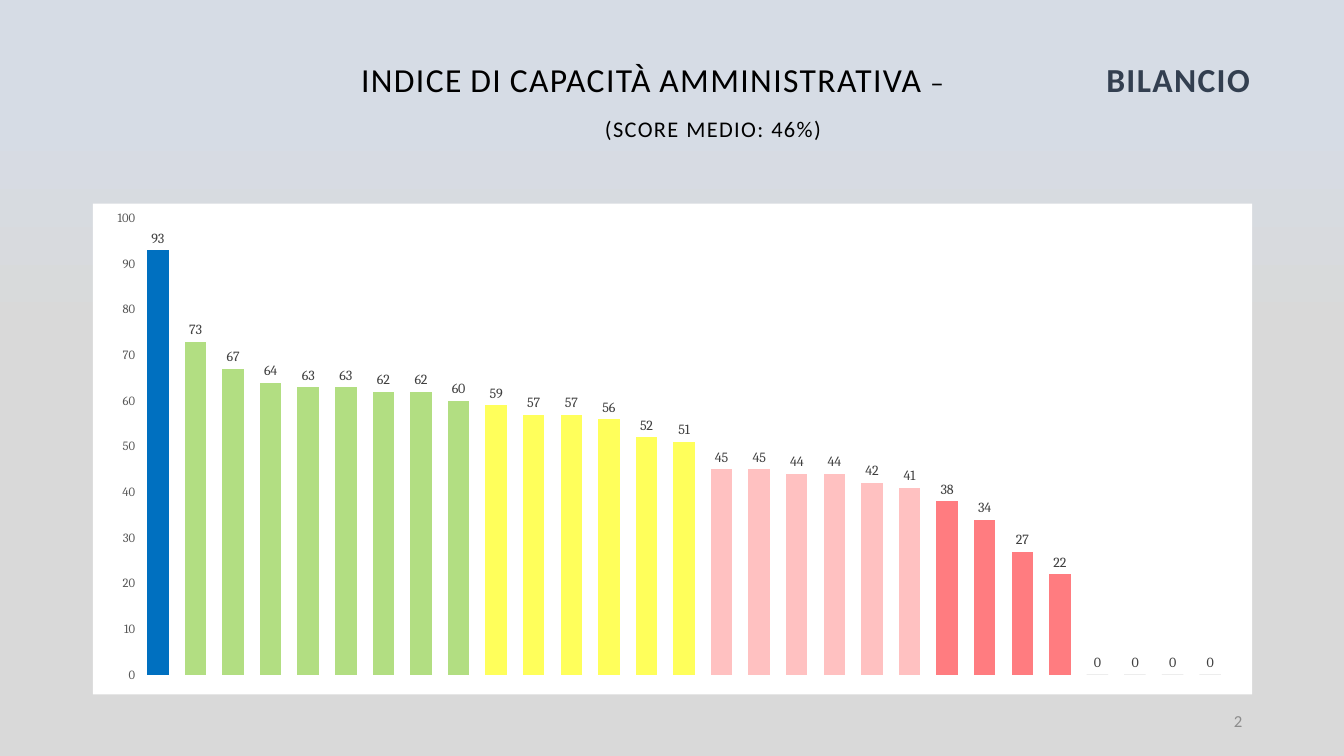
from lxml import etree
from pptx import Presentation
from pptx.chart.data import CategoryChartData
from pptx.dml.color import RGBColor
from pptx.enum.chart import XL_CHART_TYPE, XL_LABEL_POSITION, XL_TICK_MARK
from pptx.enum.text import MSO_ANCHOR, MSO_AUTO_SIZE, PP_ALIGN
from pptx.oxml import parse_xml
from pptx.oxml.ns import nsdecls, qn
from pptx.util import Inches, Pt

BLACK = RGBColor(0x00, 0x00, 0x00)
NAVY = RGBColor(0x33, 0x3F, 0x50)
NUMBER_GRAY = RGBColor(0x8C, 0x8C, 0x8C)
AXIS_GRAY = RGBColor(0x59, 0x59, 0x59)
LABEL_GRAY = RGBColor(0x40, 0x40, 0x40)
BLUE = RGBColor(0x00, 0x70, 0xC0)
GREEN = RGBColor(0xB2, 0xDE, 0x82)
YELLOW = RGBColor(0xFF, 0xFF, 0x5B)
PINK = RGBColor(0xFF, 0xC1, 0xC1)
RED = RGBColor(0xFF, 0x7C, 0x80)
ZERO_GRAY = RGBColor(0x76, 0x71, 0x71)

MARGIN, CONTENT_WIDTH = Inches(0.92), Inches(11.5)

# Scores by colour band, from best to worst
BANDS = [
    (BLUE, [93]),
    (GREEN, [73, 67, 64, 63, 63, 62, 62, 60]),
    (YELLOW, [59, 57, 57, 56, 52, 51]),
    (PINK, [45, 45, 44, 44, 42, 41]),
    (RED, [38, 34, 27, 22]),
    (ZERO_GRAY, [0, 0, 0, 0]),
]


def add_run(para, text, size, color, bold=False, spacing=None):
    run = para.add_run()
    run.text = text
    font = run.font
    font.name, font.size, font.bold = "Calibri", Pt(size), bold
    font.color.rgb = color
    if spacing is not None:
        properties = run._r.get_or_add_rPr()
        properties.set("cap", "small")
        properties.set("spc", str(spacing * 100))


def set_font(font, size, color):
    font.name, font.size = "Cambria", Pt(size)
    font.color.rgb = color


deck = Presentation()
deck.slide_width, deck.slide_height = Inches(13.33), Inches(7.5)
page = deck.slides.add_slide(deck.slide_layouts[5])

# Background gradient, top to bottom
backdrop = page.background.fill
backdrop.gradient()
backdrop.gradient_angle = 270
stops = page.background._cSld.find(".//" + qn("a:gsLst"))
for stop in list(stops):
    stops.remove(stop)
for share, color in [(0, "D6DCE5"), (15, "D6DCE5"), (45, "D9D9D9"), (100, "D9D9D9")]:
    stop = etree.SubElement(stops, qn("a:gs"), pos=str(share * 1000))
    etree.SubElement(stop, qn("a:srgbClr"), val=color)

# Title
title = page.shapes.title
title.left, title.top = MARGIN, Inches(0.2)
title.width, title.height = CONTENT_WIDTH, Inches(1.65)
frame = title.text_frame
frame.word_wrap = True
frame.auto_size = MSO_AUTO_SIZE.NONE
frame.vertical_anchor = MSO_ANCHOR.MIDDLE
heading, subtitle = frame.paragraphs[0], frame.add_paragraph()
for para, side, inset in [(heading, "marL", 1.31), (subtitle, "marR", 0.26)]:
    para.alignment = PP_ALIGN.CENTER
    para.line_spacing = 0.9
    para.space_before, para.space_after = Pt(0), Pt(10)
    para._p.get_or_add_pPr().set(side, str(Inches(inset)))
add_run(heading, "INDICE DI CAPACITÀ AMMINISTRATIVA –", 24, BLACK, spacing=1)
add_run(heading, " ", 24, BLACK, spacing=38)  # wide gap before the topic
add_run(heading, "BILANCIO", 24, NAVY, bold=True, spacing=1)
add_run(subtitle, "(score medio: 46%)", 20, BLACK, spacing=1)

# Column chart
scores = [score for _, band in BANDS for score in band]
data = CategoryChartData()
data.categories = [str(rank) for rank in range(1, len(scores) + 1)]
data.add_series("Series 1", scores)
chart = page.shapes.add_chart(XL_CHART_TYPE.COLUMN_CLUSTERED, MARGIN, Inches(2.02),
                              CONTENT_WIDTH, Inches(4.87), data).chart
chart.has_legend = chart.has_title = False
set_font(chart.font, 10, BLACK)
chart.category_axis.visible = False
axis = chart.value_axis
axis.minimum_scale, axis.maximum_scale, axis.major_unit = 0, 100, 10
axis.has_major_gridlines = False
axis.major_tick_mark = axis.minor_tick_mark = XL_TICK_MARK.NONE
axis.format.line.fill.background()
set_font(axis.tick_labels.font, 9, AXIS_GRAY)

# Bars, coloured by band
plot = chart.plots[0]
plot.gap_width = 75
plot.vary_by_categories = False
bars = plot.series[0]
bars.invert_if_negative = False
bars.format.fill.solid()
bars.format.fill.fore_color.rgb = GREEN
colors = [color for color, band in BANDS for _ in band]
for index, color in enumerate(colors):
    if color != GREEN:
        fill = bars.points[index].format.fill
        fill.solid()
        fill.fore_color.rgb = color
labels = bars.data_labels
labels.show_value = True
labels.position = XL_LABEL_POSITION.OUTSIDE_END
set_font(labels.font, 10, LABEL_GRAY)

# White chart area and fixed plot position
space = chart._chartSpace
space.find(qn("c:txPr")).addprevious(parse_xml(
    f'<c:spPr {nsdecls("c", "a")}><a:solidFill><a:srgbClr val="FFFFFF"/></a:solidFill>'
    '<a:ln><a:noFill/></a:ln></c:spPr>'))
area = space.find(".//" + qn("c:plotArea"))
for layout in area.findall(qn("c:layout")):
    area.remove(layout)
layout = etree.Element(qn("c:layout"))
manual = etree.SubElement(layout, qn("c:manualLayout"))
for tag, value in [("layoutTarget", "inner"), ("xMode", "edge"), ("yMode", "edge"),
                   ("x", "0.04"), ("y", "0.03"), ("w", "0.94"), ("h", "0.93")]:
    etree.SubElement(manual, qn("c:" + tag), val=value)
area.insert(0, layout)

# Page number
box = page.shapes.add_textbox(Inches(9.42), Inches(6.95), Inches(3), Inches(0.4))
box.text_frame.word_wrap = True
box.text_frame.vertical_anchor = MSO_ANCHOR.MIDDLE
para = box.text_frame.paragraphs[0]
para.alignment = PP_ALIGN.RIGHT
para.space_after = Pt(6)
add_run(para, "2", 12, NUMBER_GRAY)

deck.save("out.pptx")
